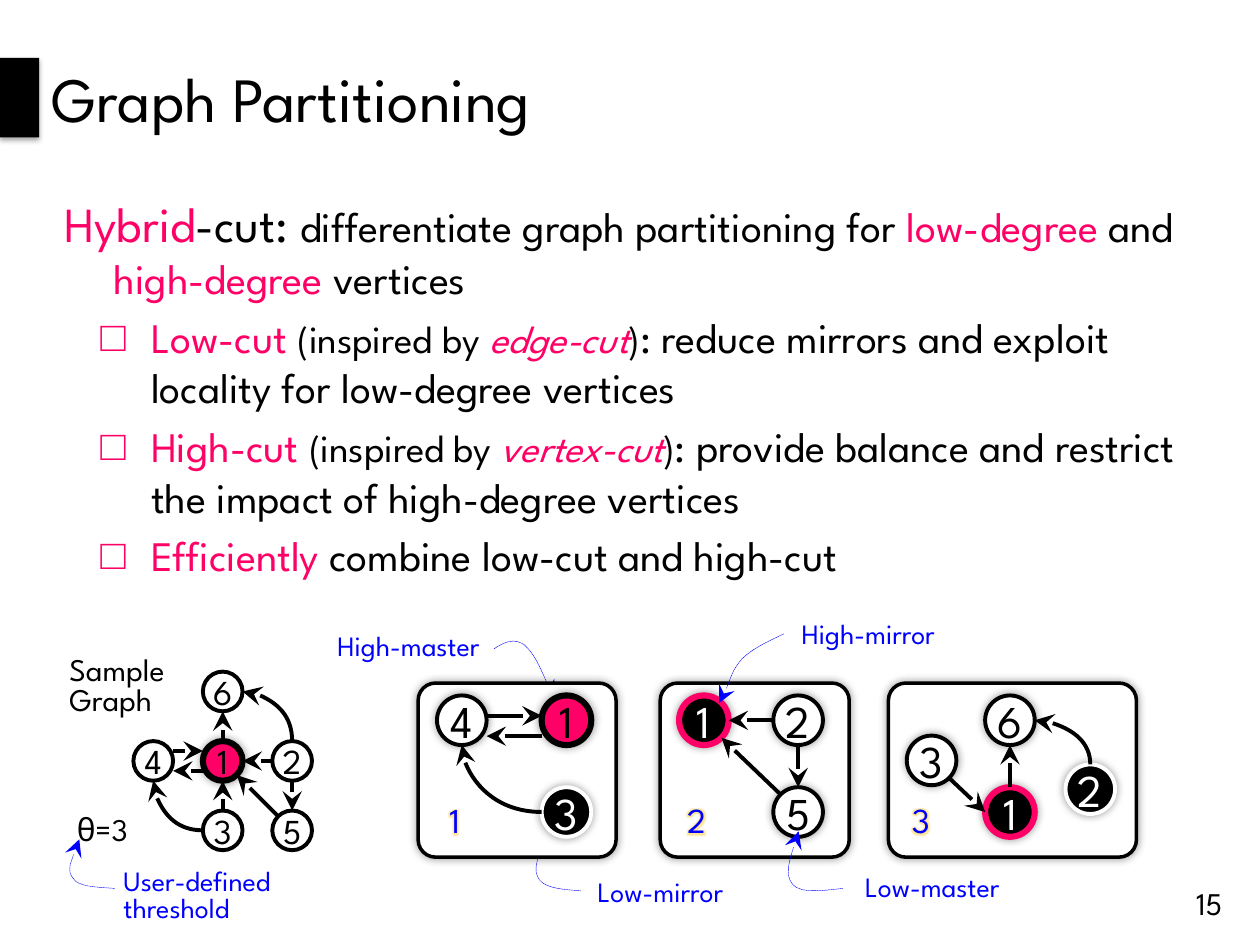
from lxml import etree
from pptx import Presentation
from pptx.dml.color import RGBColor
from pptx.enum import dml, shapes, text
from pptx.oxml import ns
from pptx.util import Cm, Pt

FONT = "League Spartan"
PINK, BLUE, BLACK, WHITE = "FF0066", "0000FF", "000000", "FFFFFF"
LEFT, CENTER, RIGHT = text.PP_ALIGN.LEFT, text.PP_ALIGN.CENTER, text.PP_ALIGN.RIGHT
SIDES = {"N": (0, -1), "S": (0, 1), "W": (-1, 0), "E": (1, 0),
         "NW": (-0.71, -0.71), "SE": (0.71, 0.71)}
STYLES = {"plain": (WHITE, BLACK, 2.25, BLACK),
          "high master": (PINK, BLACK, 3.5, BLACK),
          "high mirror": (BLACK, PINK, 3.5, WHITE),
          "low mirror": (BLACK, WHITE, 2.25, WHITE)}


def color(value):
    return RGBColor.from_string(value)


def sub(parent, tag, **attrs):
    return etree.SubElement(parent, ns.qn(tag), {k: str(v) for k, v in attrs.items()})


def tint(parent, value, alpha):
    sub(sub(parent, "a:srgbClr", val=value), "a:alpha", val=alpha * 1000)


def add_run(p, content, size=24, fill=BLACK, italic=False):
    r = p.add_run()
    r.text = content
    r.font.name, r.font.size, r.font.italic = FONT, Pt(size), italic
    r.font.color.rgb = color(fill)
    return r


def write(sp, content, align=LEFT, spacing=None, inset=0, wrap=True, **font):
    tf = sp.text_frame
    tf.word_wrap = wrap
    tf.vertical_anchor = text.MSO_ANCHOR.MIDDLE
    tf.margin_left = tf.margin_right = tf.margin_top = tf.margin_bottom = Cm(inset)
    p = tf.paragraphs[0]
    p.alignment = align
    if spacing:
        p.line_spacing = spacing
    return add_run(p, content, **font)


def add_label(s, content, x, y, w=3.61, h=0.89, **fmt):
    sp = s.add_textbox(Cm(x), Cm(y), Cm(w), Cm(h))
    return write(sp, content, **fmt)


def add_shadow(sp, blur=5, dist=0, alpha=40):
    shadow = sub(sp._element.spPr.find(ns.qn("a:effectLst")), "a:outerShdw",
                 blurRad=Pt(blur), dist=Pt(dist), dir=5400000, algn="ctr", rotWithShape=0)
    tint(shadow, BLACK, alpha)


def add_box(s, kind, x, y, w, h, fill, line=None, width=2):
    sp = s.add_shape(kind, Cm(x), Cm(y), Cm(w), Cm(h))
    sp.shadow.inherit = False
    sp.fill.solid()
    sp.fill.fore_color.rgb = color(fill)
    if line:
        sp.line.color.rgb = color(line)
        sp.line.width = Pt(width)
    else:
        sp.line.fill.background()
    return sp


def add_arrowhead(line, tag="a:tailEnd"):
    sub(line._get_or_add_ln(), tag, type="stealth", w="lg", len="lg")


def add_node(s, name, x, y, size, style, font_size, shadow):
    fill, line, width, ink = STYLES[style]
    sp = add_box(s, shapes.MSO_SHAPE.OVAL, x - size / 2, y - size / 2, size, size,
                 fill, line, width)
    if shadow:
        add_shadow(sp)
    write(sp, name, align=CENTER, wrap=False, size=font_size, fill=ink)


def add_edge(s, start, end, curved, head="a:tailEnd"):
    kind = shapes.MSO_CONNECTOR.CURVE if curved else shapes.MSO_CONNECTOR.STRAIGHT
    c = s.add_connector(kind, *map(Cm, start + end))
    if curved:
        c._element.spPr.find(ns.qn("a:prstGeom")).set("prst", "curvedConnector2")
    c.line.color.rgb = color(BLACK)
    c.line.width = Pt(2.25)
    add_arrowhead(c.line, head)
    sub(c._element.spPr, "a:effectLst")


def add_graph(s, nodes, edges, size, font_size, plain_shadow=True):
    for name, (x, y, style) in nodes.items():
        add_node(s, name, x, y, size, style, font_size, plain_shadow or style != "plain")

    def port(name, side, shift):
        x, y, _ = nodes[name]
        dx, dy = SIDES[side]
        return x + dx * size / 2, y + dy * size / 2 + shift

    for a, a_side, b, b_side, shift in edges:
        start, end = port(a, a_side, shift), port(b, b_side, shift)
        if (a_side, b_side) == ("N", "E"):
            add_edge(s, end, start, True, "a:headEnd")
        else:
            add_edge(s, start, end, (a_side, b_side) == ("W", "S"))


def add_partition(slide, number, x, w, tag_x, nodes, edges):
    s = slide.shapes.add_group_shape().shapes
    box = add_box(s, shapes.MSO_SHAPE.ROUNDED_RECTANGLE, x, 13.77, w, 3.51, WHITE, BLACK)
    box.adjustments[0] = 0.1
    add_shadow(box)
    add_graph(s, nodes, edges, 1, 26)
    r = add_label(s, number, tag_x, 16.08, w=0.71, align=CENTER, size=20, fill=BLUE)
    effects = etree.Element(ns.qn("a:effectLst"))
    tint(sub(effects, "a:glow", rad=Pt(5)), "FFC000", 40)
    r.font._element.find(ns.qn("a:solidFill")).addnext(effects)


def add_callout(s, *points):
    start, *rest = [(Cm(x), Cm(y)) for x, y in points]
    builder = s.build_freeform(*start)
    builder.add_line_segments(rest, close=False)
    sp = builder.convert_to_shape()
    lines = list(sp._element.iter(ns.qn("a:lnTo")))
    for i in range(0, len(lines), 3):
        curve = etree.Element(ns.qn("a:cubicBezTo"))
        lines[i].addprevious(curve)
        for line in lines[i:i + 3]:
            curve.append(line[0])
            line.getparent().remove(line)
    sp.shadow.inherit = False
    sp.fill.background()
    sp.line.color.rgb = color(BLUE)
    sp.line.width = Pt(0.25)
    sp.line.dash_style = dml.MSO_LINE.SQUARE_DOT
    add_arrowhead(sp.line)


def add_item(p, runs, margin, hanging, bullet=None):
    pPr = p._p.get_or_add_pPr()
    pPr.set("marL", str(Cm(margin)))
    pPr.set("indent", str(-Cm(hanging)))
    if bullet:
        sub(sub(pPr, "a:buClr"), "a:srgbClr", val=PINK)
        sub(pPr, "a:buChar", char=bullet)
    else:
        sub(pPr, "a:buNone")
    for content, fmt in runs:
        add_run(p, content, **fmt)


def fill_body(body):
    pink, small = {"fill": PINK}, {"size": 22}
    tf = body.text_frame
    tf.auto_size = text.MSO_AUTO_SIZE.NONE
    add_item(tf.paragraphs[0], [
        ("Hybrid", {"size": 28, "fill": PINK}), ("-cut: ", {"size": 28}),
        ("differentiate graph partitioning for ", {}), ("low-degree", pink),
        (" and ", {}), ("high-degree ", pink), ("vertices", {})], 1, 1)
    cuts = [("Low-cut ", "edge-cut",
             ": reduce mirrors and exploit locality for low-degree vertices"),
            ("High-cut ", "vertex-cut",
             ": provide balance and restrict the impact of high-degree vertices")]
    items = [[(name, pink), ("(inspired by ", small),
              (source, {"size": 22, "fill": PINK, "italic": True}), (")", small), (aim, {})]
             for name, source, aim in cuts]
    items.append([("Efficiently", pink), (" combine low-cut and high-cut", {})])
    for runs in items:
        add_item(tf.add_paragraph(), runs, 1.75, 1.02, "□")


def add_sample_graph(slide):
    s = slide.shapes.add_group_shape().shapes
    cells = {"1": (1, 1), "2": (2, 1), "4": (0, 1), "3": (1, 2), "5": (2, 2), "6": (1, 0)}
    nodes = {name: (3.09 + 1.4 * col, 13.94 + 1.4 * row,
                    "high master" if name == "1" else "plain")
             for name, (col, row) in cells.items()}
    edges = [("4", "E", "1", "W", -0.2), ("1", "W", "4", "E", 0.2), ("2", "W", "1", "E", 0),
             ("5", "NW", "1", "SE", 0), ("3", "N", "1", "S", 0), ("1", "N", "6", "S", 0),
             ("2", "S", "5", "N", 0), ("2", "N", "6", "E", 0), ("3", "W", "4", "S", 0)]
    add_graph(s, nodes, edges, 0.8, 20, plain_shadow=False)
    add_label(s, "Sample Graph", 1.4, 13.41, w=2.49, spacing=0.8, size=18)
    add_label(s, "θ=3", 1.3, 16.21, w=1.68, h=1.02, inset=0.25, wrap=False, size=18)


def place(sp, x, y, w, h):
    sp.left, sp.top, sp.width, sp.height = Cm(x), Cm(y), Cm(w), Cm(h)


def main():
    prs = Presentation()
    prs.slide_width, prs.slide_height = Cm(25.4), Cm(19.05)
    slide = prs.slides.add_slide(prs.slide_layouts[1])
    s = slide.shapes
    title, body = slide.placeholders
    place(title, 0.79, 0, 24.61, 3.94)
    write(title, "Graph Partitioning", inset=0.25, size=36)
    bar = add_box(s, shapes.MSO_SHAPE.RECTANGLE, 0, 1.17, 0.79, 1.6, BLACK)
    add_shadow(bar, blur=3.1, dist=1.8, alpha=35)
    place(body, 1.04, 3.78, 23.47, 8.79)
    fill_body(body)

    top, bottom = 14.52, 16.37
    add_partition(slide, "2", 13.31, 3.81, 13.69,
                  {"1": (14.19, top, "high mirror"), "2": (16.09, top, "plain"),
                   "5": (16.09, bottom, "plain")},
                  [("2", "W", "1", "E", 0), ("2", "S", "5", "N", 0), ("5", "NW", "1", "SE", 0)])
    add_partition(slide, "3", 17.91, 5, 18.21,
                  {"1": (20.36, bottom, "high mirror"), "2": (21.98, 15.91, "low mirror"),
                   "3": (18.78, 15.33, "plain"), "6": (20.36, top, "plain")},
                  [("3", "SE", "1", "W", 0), ("1", "N", "6", "S", 0), ("2", "N", "6", "E", 0)])
    for name, x, y in [("High-master", 6.43, 12.57), ("Low-master", 16.99, 17.42),
                       ("High-mirror", 15.7, 12.32), ("Low-mirror", 11.51, 17.53)]:
        add_label(s, name, x, y, align=CENTER, size=16, fill=BLUE)
    add_callout(s, (11.71, 17.96), (11.35, 17.93), (11, 17.91), (10.87, 17.73),
                (10.74, 17.53), (10.9, 17.15), (11.02, 16.76))
    add_callout(s, (16.99, 17.91), (16.56, 17.96), (16.13, 18.01), (15.98, 17.83),
                (15.82, 17.63), (15.95, 17.2), (16.1, 16.76))
    add_callout(s, (9.96, 13.08), (10.16, 12.95), (10.36, 12.85), (10.57, 13),
                (10.77, 13.18), (10.97, 13.61), (11.15, 14.07))
    add_callout(s, (15.8, 12.78), (15.49, 12.93), (15.19, 13.06), (14.96, 13.28),
                (14.76, 13.51), (14.61, 14.02), (14.5, 14.17))
    add_partition(slide, "1", 8.43, 3.99, 8.81,
                  {"1": (11.42, top, "high master"), "4": (9.31, top, "plain"),
                   "3": (11.42, bottom, "low mirror")},
                  [("4", "E", "1", "W", -0.09), ("1", "W", "4", "E", 0.32),
                   ("3", "W", "4", "S", 0)])
    add_sample_graph(slide)
    add_label(s, "User-defined threshold", 2.49, 17.63, spacing=0.8, size=16, fill=BLUE)
    add_callout(s, (2.31, 17.91), (1.93, 17.88), (1.57, 17.88), (1.47, 17.7),
                (1.35, 17.55), (1.47, 17.25), (1.6, 16.92))
    add_label(s, "15", 23.7, 17.7, w=1.19, h=1.02, inset=0.25, wrap=False,
              align=RIGHT, size=18)
    prs.save("out.pptx")


if __name__ == "__main__":
    main()
